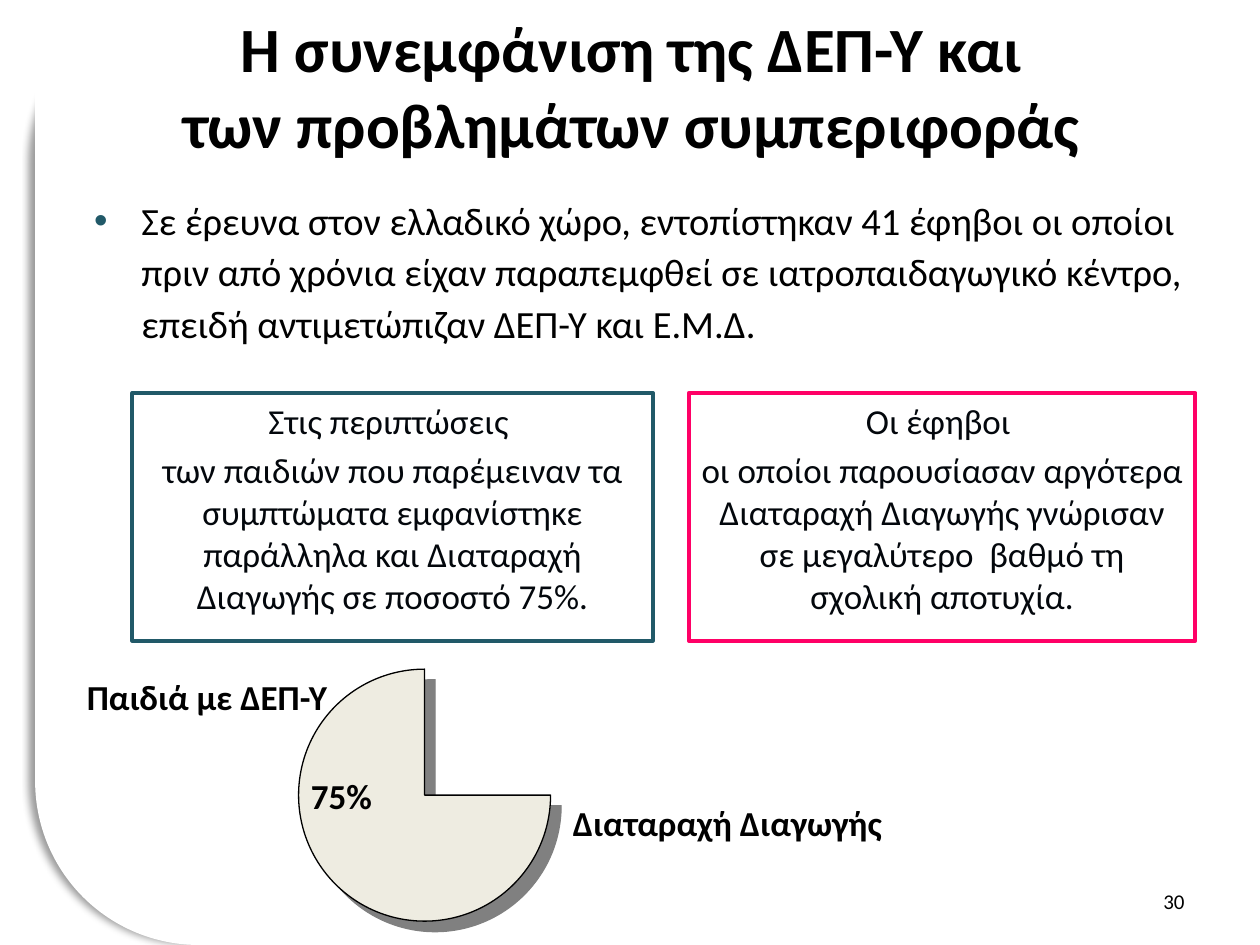
from dataclasses import dataclass

from lxml.etree import SubElement
from pptx import Presentation
from pptx.dml.color import RGBColor
from pptx.enum.shapes import MSO_SHAPE as Shape
from pptx.enum.text import MSO_ANCHOR as Anchor, MSO_AUTO_SIZE as AutoSize, PP_ALIGN as Align
from pptx.oxml.ns import qn
from pptx.util import Cm, Pt

COLORS = {
    "white": "FFFFFF", "black": "000000", "ink": "03070C", "teal": "215968",
    "pink": "FF0066", "cream": "EEECE1", "gray": "808080",
}
FONT = "Calibri"


@dataclass(frozen=True)
class Box:
    left: float
    top: float
    width: float
    height: float

    def emu(self) -> tuple:
        return Cm(self.left), Cm(self.top), Cm(self.width), Cm(self.height)


@dataclass(frozen=True)
class Style:
    size: float
    color: str = "black"
    bold: bool = False
    align: Align = Align.LEFT
    anchor: Anchor = Anchor.TOP
    space: float = 0  # points between paragraphs


@dataclass(frozen=True)
class Finding:
    box: Box
    line: str
    paragraphs: tuple


LABEL = Style(20, bold=True)
FINDING = Style(20, "ink", align=Align.CENTER, space=4)

PANELS = [  # the last two square off three corners of the first
    (Shape.ROUNDED_RECTANGLE, Box(0.71, 0, 24.69, 19.05)),
    (Shape.RECTANGLE, Box(10.11, 4.65, 15.29, 14.4)),
    (Shape.RECTANGLE, Box(0.71, 0, 24.69, 13.33)),
]
FINDINGS = [
    Finding(Box(2.67, 7.92, 10.49, 5), "teal", (
        "Στις περιπτώσεις ",
        "των παιδιών που παρέμειναν τα συμπτώματα εμφανίστηκε "
        "παράλληλα και Διαταραχή Διαγωγής σε ποσοστό 75%.")),
    Finding(Box(13.89, 7.92, 10.21, 5), "pink", (
        "Οι έφηβοι ",
        "οι οποίοι παρουσίασαν αργότερα Διαταραχή Διαγωγής "
        "γνώρισαν σε μεγαλύτερο  βαθμό τη σχολική αποτυχία.")),
]
LABELS = [
    (Box(1.5, 13.49, 6.2, 1.12), "Παιδιά με ΔΕΠ-Υ", LABEL),
    (Box(11.3, 16.03, 8.2, 1.12), "Διαταραχή Διαγωγής", LABEL),
    (Box(18.21, 17.65, 5.92, 1.02), "30",
     Style(12, align=Align.RIGHT, anchor=Anchor.MIDDLE)),
]


def rgb(name: str) -> RGBColor:
    return RGBColor.from_string(COLORS[name])


def write(tf, paragraphs: tuple, style: Style) -> None:
    """Fill a text frame; a newline inside a paragraph is a line break."""
    tf.word_wrap = True
    tf.auto_size = AutoSize.NONE
    tf.vertical_anchor = style.anchor
    for i, text in enumerate(paragraphs):
        p = tf.add_paragraph() if i else tf.paragraphs[0]
        p.alignment = style.align
        if i:
            p.space_before = Pt(style.space)
        for j, line in enumerate(text.split("\n")):
            if j:
                p.add_line_break()
            r = p.add_run()
            r.text = line
            r.font.name = FONT
            r.font.size = Pt(style.size)
            r.font.bold = style.bold
            r.font.color.rgb = rgb(style.color)


def add_text(s, box: Box, text: str, style: Style):
    sp = s.shapes.add_textbox(*box.emu())
    write(sp.text_frame, (text,), style)
    return sp


def add_shape(s, kind: Shape, box: Box, fill: str = "", line: str = "", width: float = 0):
    sp = s.shapes.add_shape(kind, *box.emu())
    sp.shadow.inherit = False
    if fill:
        sp.fill.solid()
        sp.fill.fore_color.rgb = rgb(fill)
    else:
        sp.fill.background()
    if line:
        sp.line.color.rgb = rgb(line)
        sp.line.width = Pt(width)
    else:
        sp.line.fill.background()
    return sp


def add_shadow(sp, color: str, alpha: int, blur: float, dist: float, angle: int) -> None:
    effects = sp._element.spPr.find(qn("a:effectLst"))
    shadow = SubElement(effects, qn("a:outerShdw"), blurRad=str(Pt(blur)),
                        dist=str(Pt(dist)), dir=str(angle * 60000),
                        algn="ctr", rotWithShape="0")
    clr = SubElement(shadow, qn("a:srgbClr"), val=COLORS[color])
    SubElement(clr, qn("a:alpha"), val=str(alpha * 1000))


def add_bullet(p, color: str, indent: float) -> None:
    pPr = p._p.get_or_add_pPr()
    pPr.set("marL", str(Cm(indent)))
    pPr.set("indent", str(-Cm(indent)))
    clr = SubElement(pPr, qn("a:buClr"))
    SubElement(clr, qn("a:srgbClr"), val=COLORS[color])
    SubElement(pPr, qn("a:buFont"), typeface="Arial")
    SubElement(pPr, qn("a:buChar"), char="•")


def main() -> None:
    prs = Presentation()
    prs.slide_width, prs.slide_height = Cm(25.4), Cm(19.05)
    s = prs.slides.add_slide(prs.slide_layouts[5])

    # Page panel with one rounded corner
    page, *_ = [add_shape(s, kind, box, "white") for kind, box in PANELS]
    page.adjustments[0] = 0.173
    add_shadow(page, "black", 40, blur=4, dist=3, angle=180)

    # Title, brought in front of the panel
    title = s.shapes.title
    s.shapes._spTree.append(title._element)
    title.left, title.top, title.width, title.height = Box(1.3, 0.33, 22.86, 2.79).emu()
    write(title.text_frame,
          ("Η συνεμφάνιση της ΔΕΠ-Υ και\nτων προβλημάτων συμπεριφοράς",),
          Style(36, bold=True, align=Align.CENTER, anchor=Anchor.MIDDLE))

    # Bulleted introduction
    intro = add_text(
        s, Box(1.65, 3.73, 22.86, 3.81),
        "Σε έρευνα στον ελλαδικό χώρο, εντοπίστηκαν 41 έφηβοι οι οποίοι "
        "πριν από χρόνια είχαν παραπεμφθεί σε ιατροπαιδαγωγικό κέντρο, "
        "επειδή αντιμετώπιζαν ΔΕΠ-Υ και Ε.Μ.Δ.", Style(22))
    p = intro.text_frame.paragraphs[0]
    p.line_spacing = 1.12
    add_bullet(p, "teal", 0.95)

    # Framed findings
    for finding in FINDINGS:
        sp = add_shape(s, Shape.RECTANGLE, finding.box, line=finding.line, width=2.25)
        write(sp.text_frame, finding.paragraphs, FINDING)

    # Three-quarter pie
    pie = add_shape(s, Shape.PIE, Box(6.02, 13.49, 5.08, 5.08), "cream", "black", 0.75)
    add_shadow(pie, "gray", 100, blur=0, dist=8.5, angle=45)
    write(pie.text_frame, ("75%",), Style(20, bold=True, anchor=Anchor.MIDDLE))

    # Pie labels and page number
    for box, text, style in LABELS:
        add_text(s, box, text, style)

    prs.save("out.pptx")


if __name__ == "__main__":
    main()
